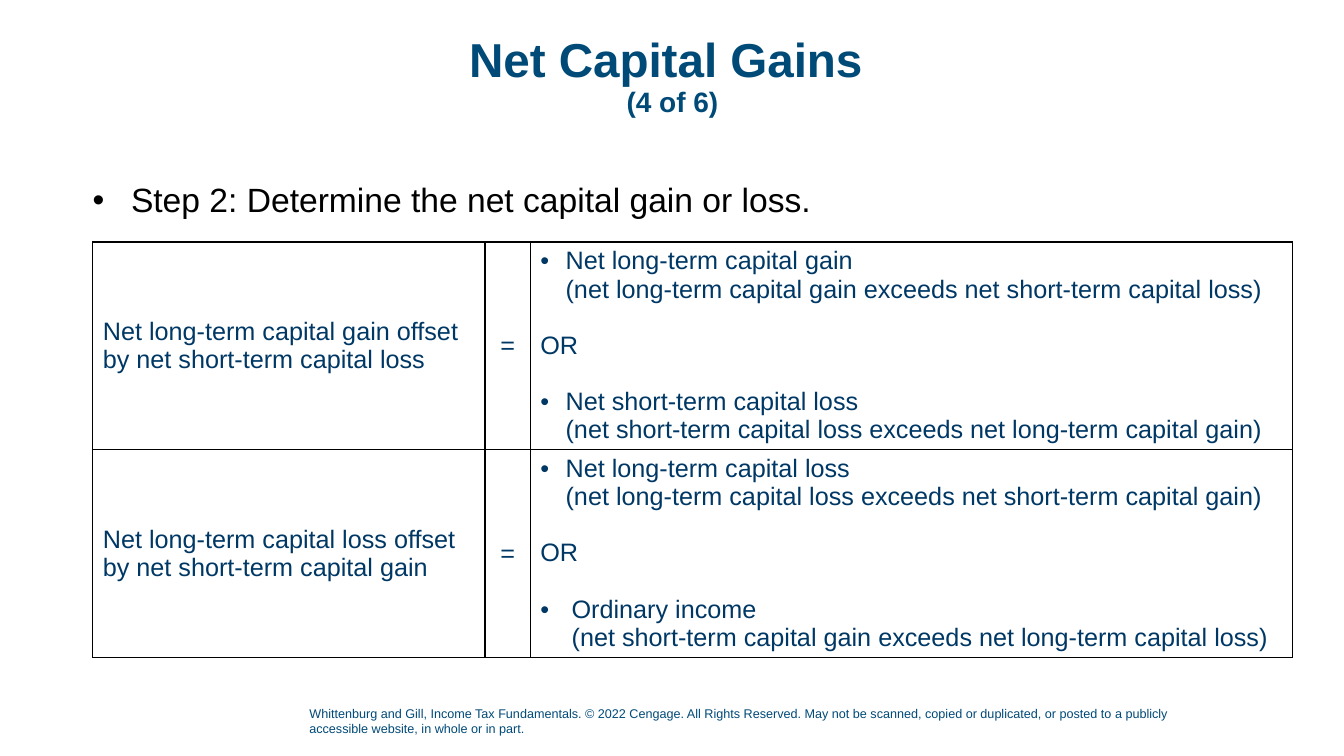
from lxml.etree import SubElement as Sub
from pptx import Presentation
from pptx.dml.color import RGBColor
from pptx.enum.text import MSO_ANCHOR as Anchor, MSO_AUTO_SIZE as Fit, PP_ALIGN as Align
from pptx.oxml.ns import qn
from pptx.util import Inches, Pt

BLUE = RGBColor(0x00, 0x4A, 0x78)
NAVY = RGBColor(0x00, 0x38, 0x65)
BLACK = RGBColor(0, 0, 0)
WHITE = RGBColor(255, 255, 255)
LEFT, WIDE = 0.92, 11.9
COLS = (3.89, 0.45, 7.56)
ROW = 2.06
RULES = (
    ("Net long-term capital gain offset by net short-term capital loss",
     "Net long-term capital gain \n(net long-term capital gain exceeds net short-term capital loss)",
     "Net short-term capital loss \n(net short-term capital loss exceeds net long-term capital gain)",
     0.25),
    ("Net long-term capital loss offset by net short-term capital gain",
     "Net long-term capital loss \n(net long-term capital loss exceeds net short-term capital gain)",
     "Ordinary income \n(net short-term capital gain exceeds net long-term capital loss)",
     0.31),
)


def put(para, text, size=18, color=NAVY, bold=False, align=Align.LEFT,
        lines=None, gap=0, indent=0):
    """Add formatted text to a paragraph, with a bullet if indented."""
    para.alignment = align
    if lines:
        para.line_spacing = lines
    if gap:
        para.space_before = para.space_after = Pt(gap)
    if indent and para._p.pPr.find(qn("a:buChar")) is None:
        props = para._p.pPr
        props.set("marL", str(Inches(indent)))
        props.set("indent", str(-Inches(indent)))
        Sub(props, qn("a:buFont"), typeface="Arial")
        Sub(props, qn("a:buChar"), char="•")
    for num, part in enumerate(text.split("\n")):
        if num:
            para.add_line_break()
            Sub(para._p.findall(qn("a:br"))[-1], qn("a:rPr"), sz=str(size * 100))
        if part:
            run = para.add_run()
            run.text = part
            font = run.font
            font.name, font.size, font.bold = "Arial", Pt(size), bold
            font.color.rgb = color


def frame(shape, pad=0):
    """Prepare the text frame of a shape and return it."""
    text = shape.text_frame
    text.word_wrap, text.auto_size = True, Fit.NONE
    text.vertical_anchor = Anchor.TOP
    text.margin_left = text.margin_right = Inches(pad)
    text.margin_top = text.margin_bottom = Inches(pad / 2)
    return text


def head(slide, left, top, width, height):
    """Fill and place the slide title."""
    title = slide.shapes.title
    title.left, title.top = Inches(left), Inches(top)
    title.width, title.height = Inches(width), Inches(height)
    text = frame(title)
    text.vertical_anchor = Anchor.MIDDLE
    look = dict(color=BLUE, bold=True, align=Align.CENTER, lines=0.9)
    put(text.paragraphs[0], "Net Capital Gains \n", size=34, **look)
    put(text.paragraphs[0], "(4 of 6)", size=20, **look)


def note(slide, box, text, pad=0, **look):
    """Place one paragraph in a text box."""
    shape = slide.shapes.add_textbox(*map(Inches, box))
    put(frame(shape, pad).paragraphs[0], text, **look)


def edge(cell):
    """Give a cell a white fill and thin black borders."""
    props = cell._tc.get_or_add_tcPr()
    for side in ("lnL", "lnR", "lnT", "lnB"):
        line = Sub(props, qn("a:" + side), w=str(Pt(1)))
        Sub(Sub(line, qn("a:solidFill")), qn("a:srgbClr"), val=str(BLACK))
    cell.fill.solid()
    cell.fill.fore_color.rgb = WHITE


def grid(slide, left, top, width):
    """Draw the table of offset rules."""
    table = slide.shapes.add_table(
        len(RULES), len(COLS), Inches(left), Inches(top),
        Inches(width), Inches(ROW * len(RULES))).table
    table.first_row = table.horz_banding = False
    for col, share in zip(table.columns, COLS):
        col.width = Inches(width * share / sum(COLS))
    for row, (case, gain, other, indent) in zip(table.rows, RULES):
        row.height = Inches(ROW)
        for cell in row.cells:
            edge(cell)
        start, sign, end = row.cells
        start.vertical_anchor = sign.vertical_anchor = Anchor.MIDDLE
        put(start.text_frame.paragraphs[0], case)
        put(sign.text_frame.paragraphs[0], "=", align=Align.CENTER)
        text = end.text_frame
        put(text.paragraphs[0], gain, indent=0.25)
        put(text.add_paragraph(), "OR", gap=20)
        put(text.add_paragraph(), other, indent=indent)


def main():
    """Build and save the slide."""
    deck = Presentation()
    deck.slide_width, deck.slide_height = Inches(13.33), Inches(7.5)
    slide = deck.slides.add_slide(deck.slide_layouts[5])
    note(slide, (2.97, 6.95, 9.29, 0.4),
         "Whittenburg and Gill, Income Tax Fundamentals. © 2022 Cengage. "
         "All Rights Reserved. May not be scanned, copied or duplicated, "
         "or posted to a publicly accessible website, in whole or in part.",
         pad=0.1, size=9, color=BLUE)
    head(slide, LEFT, 0.4, 11.5, 0.74)
    note(slide, (LEFT, 1.82, WIDE, 0.5),
         "Step 2: Determine the net capital gain or loss.",
         size=24, color=BLACK, lines=0.9, indent=0.38)
    grid(slide, LEFT, 2.4, WIDE)
    deck.save("out.pptx")


if __name__ == "__main__":
    main()
